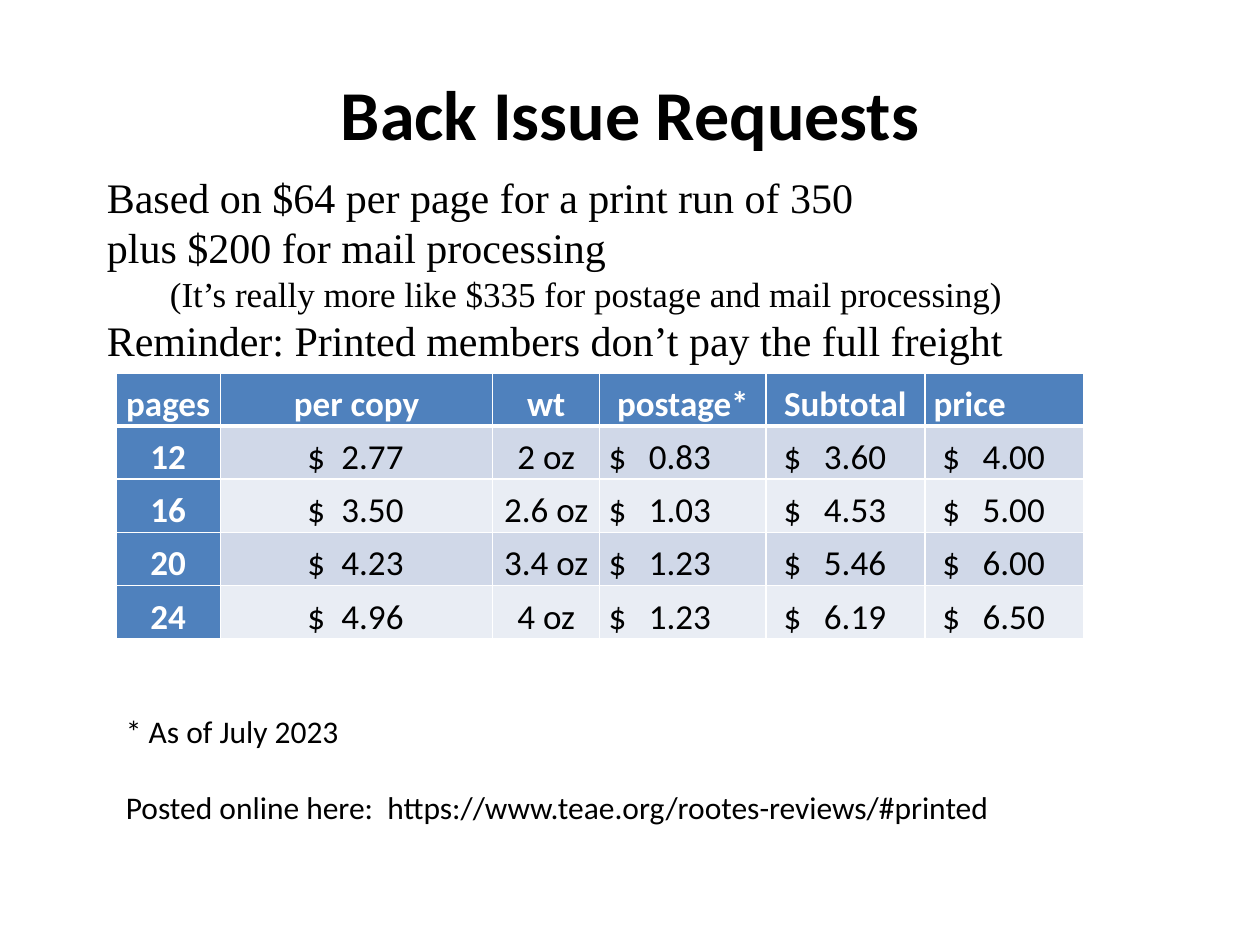
from lxml.etree import SubElement
from pptx import Presentation
from pptx.dml.color import RGBColor
from pptx.enum.text import MSO_ANCHOR as Anchor, PP_ALIGN as Align
from pptx.oxml.ns import qn
from pptx.util import Inches, Pt

BLACK = RGBColor(0x00, 0x00, 0x00)
WHITE = RGBColor(0xFF, 0xFF, 0xFF)
BLUE = RGBColor(0x4F, 0x81, 0xBD)
BANDS = RGBColor(0xD0, 0xD8, 0xE8), RGBColor(0xE9, 0xED, 0xF4)

deck = Presentation()
deck.slide_width, deck.slide_height = Inches(10), Inches(7.5)
slide = deck.slides.add_slide(deck.slide_layouts[6])

# Grid of 100 columns by 75 rows
COL, ROW = deck.slide_width / 100, deck.slide_height / 75


def write(paragraph, text, size, font="Calibri", color=BLACK, bold=False):
    paragraph.text = text
    style = paragraph.font
    style.size, style.name, style.bold = Pt(size), font, bold
    style.color.rgb = color


def add_text(left, top, width, height):
    box = slide.shapes.add_textbox(
        int(left * COL), int(top * ROW), int(width * COL), int(height * ROW))
    box.text_frame.word_wrap = True
    return box.text_frame


# Title
title = add_text(6.9, 4, 86.2, 16.8)
title.margin_top = int(1.6 * ROW)
write(title.paragraphs[0], "Back Issue Requests", 40, bold=True)
title.paragraphs[0].alignment = Align.CENTER

# Price table: (heading, width, indent of the dollar sign, gap to the amount)
columns = [
    ("pages", 8.3, None, None),
    ("per copy", 21.6, 6.2, 2.7),
    ("wt", 8.5, None, None),
    ("postage*", 13.2, 0, 3.2),
    ("Subtotal", 12.6, 0.7, 3.2),
    ("price", 12.6, 0.7, 3.2),
]
issues = [
    ("12", "2.77", "2 oz", "0.83", "3.60", "4.00"),
    ("16", "3.50", "2.6 oz", "1.03", "4.53", "5.00"),
    ("20", "4.23", "3.4 oz", "1.23", "5.46", "6.00"),
    ("24", "4.96", "4 oz", "1.23", "6.19", "6.50"),
]
rows = [[heading for heading, *_ in columns], *issues]
row_height = 4.22
prices = slide.shapes.add_table(
    len(rows), len(columns), int(9.2 * COL), int(29.6 * ROW),
    int(76.6 * COL), int(row_height * len(rows) * ROW)).table
prices.horz_banding = False

for c, (_, width, indent, gap) in enumerate(columns):
    prices.columns[c].width = int(width * COL)
    for r, row in enumerate(rows):
        prices.rows[r].height = int(row_height * ROW)
        cell = prices.cell(r, c)
        cell.vertical_anchor = Anchor.BOTTOM
        cell.margin_left = cell.margin_right = int(0.7 * COL)
        cell.margin_top = cell.margin_bottom = 0

        # White borders, heavier under the header
        heavy_side = {0: "lnB", 1: "lnT"}.get(r)
        for side in ("lnL", "lnR", "lnT", "lnB"):
            weight = Pt(3 if side == heavy_side else 1)
            line = SubElement(cell._tc.get_or_add_tcPr(), qn(f"a:{side}"), w=str(weight))
            SubElement(SubElement(line, qn("a:solidFill")), qn("a:srgbClr"), val=str(WHITE))

        heading = r == 0 or c == 0
        cell.fill.solid()
        cell.fill.fore_color.rgb = BLUE if heading else BANDS[(r - 1) % 2]

        entry = cell.text_frame.paragraphs[0]
        entry.line_spacing = 1.15
        amount = r > 0 and gap is not None
        if amount:  # a hanging indent sets the amount apart from its dollar sign
            layout = entry._p.get_or_add_pPr()
            layout.set("marL", str(int((indent + gap) * COL)))
            layout.set("indent", str(int(-gap * COL)))
        left = amount or row[c] == "price"
        entry.alignment = Align.LEFT if left else Align.CENTER
        write(entry, f"$\t{row[c]}" if amount else row[c], 20,
              color=WHITE if heading else BLACK, bold=heading)

# Basis of the prices
basis = add_text(7.5, 13.1, 80.8, 16.5)
basis_lines = [
    ("Based on $64 per page for a print run of 350\vplus $200 for mail processing", 24, 0),
    ("(It’s really more like $335 for postage and mail processing)", 20, 5),
    ("Reminder: Printed members don’t pay the full freight", 24, 0),
]
for i, (text, size, indent) in enumerate(basis_lines):
    paragraph = basis.add_paragraph() if i else basis.paragraphs[0]
    if indent:
        paragraph.level = 1
        paragraph._p.get_or_add_pPr().set("marL", str(int(indent * COL)))
    write(paragraph, text, size, "Times New Roman")

# Footnotes
notes = add_text(9, 56, 86.2, 10.1)
write(notes.paragraphs[0], "* As of July 2023", 18)
posted = notes.add_paragraph()
posted.space_before = Pt(22)
write(posted, "Posted online here:  https://www.teae.org/rootes-reviews/#printed", 18)

deck.save("out.pptx")
